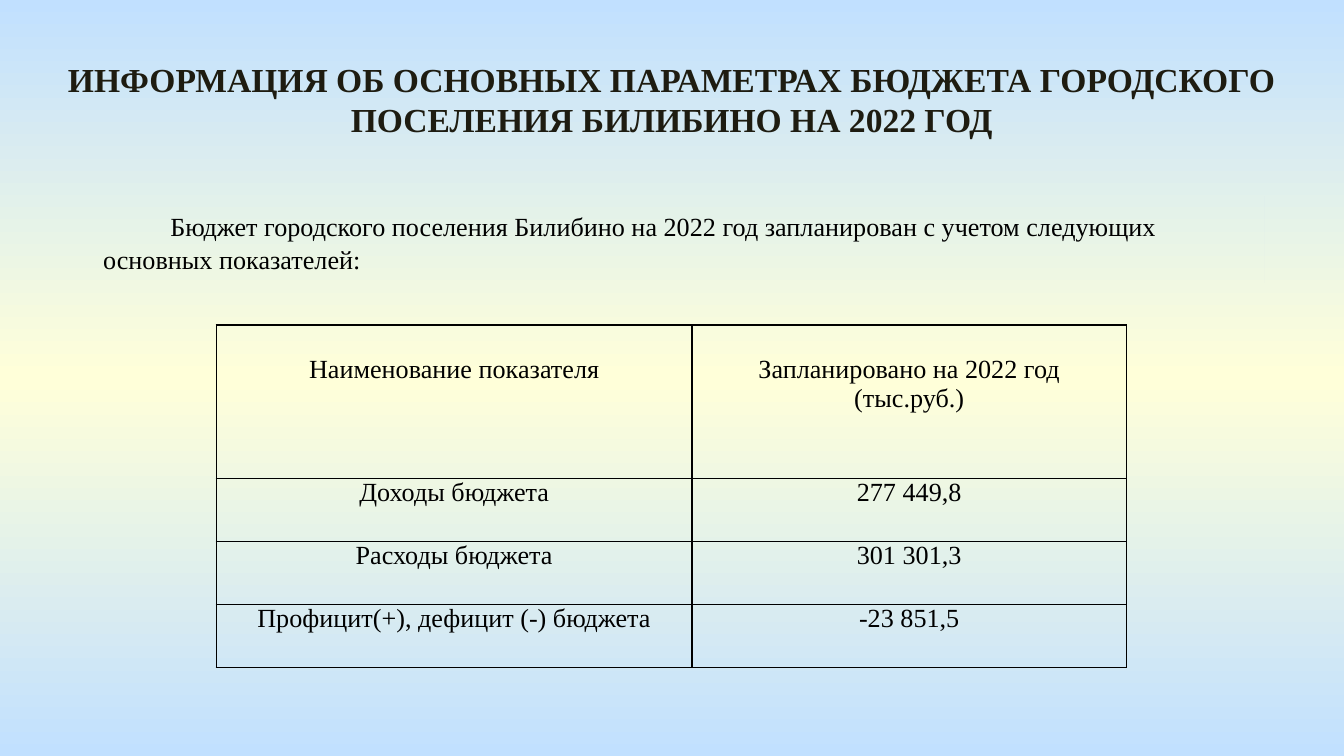
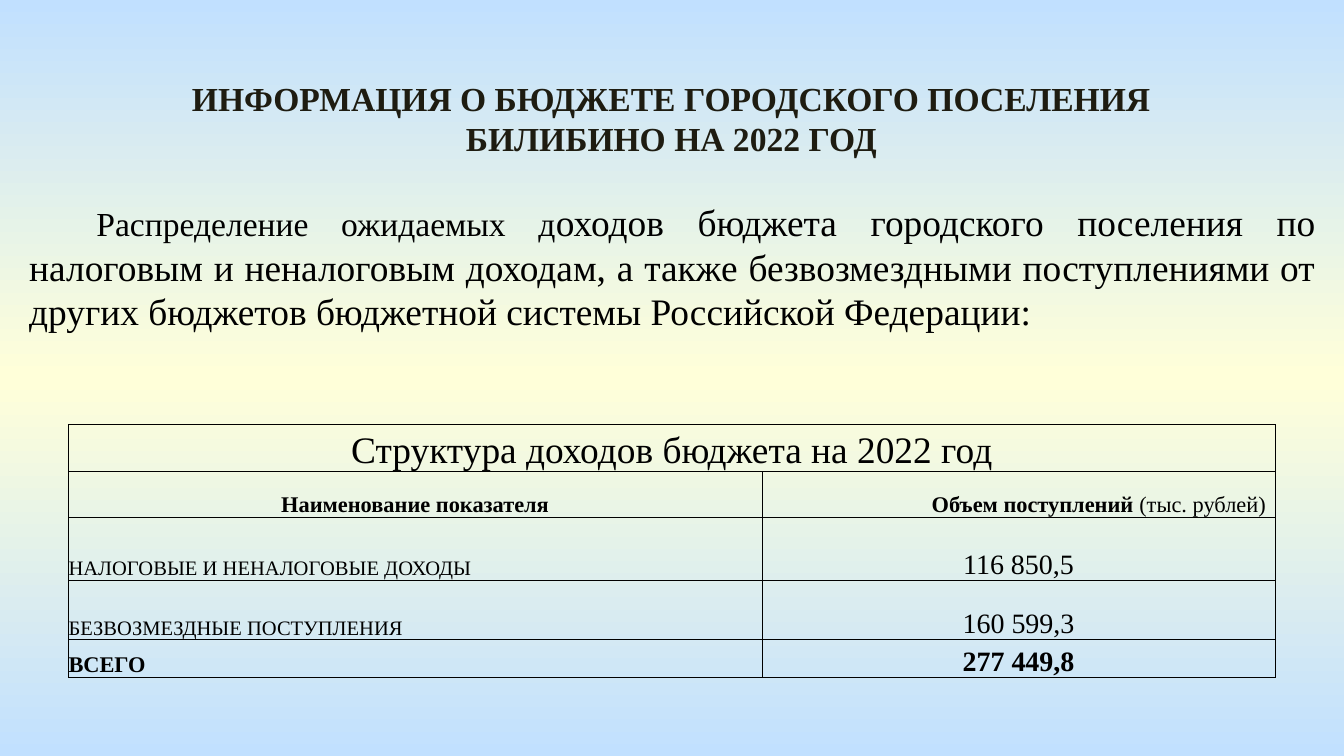
from pptx import Presentation
from pptx.dml.color import RGBColor
from pptx.enum.shapes import MSO_SHAPE
from pptx.enum.text import MSO_ANCHOR, PP_ALIGN
from pptx.util import Pt
from lxml.etree import fromstring
from copy import deepcopy

SKY, CREAM, INK, BLACK = "C1E0FF", "FFFFD9", "1E1C11", "000000"
SERIF = "Times New Roman"
LEFT, CENTER, RIGHT, JUSTIFY = PP_ALIGN.LEFT, PP_ALIGN.CENTER, PP_ALIGN.RIGHT, PP_ALIGN.JUSTIFY
NS = "http://schemas.openxmlformats.org/drawingml/2006/main"


def rgb(value):
    return RGBColor.from_string(value)


def write(tf, runs, size, align=LEFT, bold=False, color=BLACK):
    """Fill one paragraph; each run is a text and the font settings it changes."""
    p = tf.paragraphs[0]
    p.alignment = align
    p.font.name, p.font.size, p.font.bold = SERIF, Pt(size), bold
    p.font.color.rgb = rgb(color)
    for text, changes in runs:
        r = p.add_run()
        r.text = text
        for name, value in changes.items():
            setattr(r.font, name, value)


# Content: cells are (text, size, alignment, bold)
INDENT = ("\t", {"name": "Calibri", "size": Pt(18)})
head_1 = [("Наименование показателя", 14, CENTER, False),
          ("Запланировано на 2022 год (тыс.руб.)", 14, CENTER, False)]
body_1 = [[(name, 14, CENTER, False), (amount, 14, CENTER, False)] for name, amount in [
    ("Доходы бюджета", "277 449,8"),
    ("Расходы бюджета", "301 301,3"),
    ("Профицит(+), дефицит (-) бюджета", "-23 851,5")]]
head_2 = [[("Структура доходов бюджета на 2022 год", 20, CENTER, False), ("", 12, CENTER, False)],
          [("Наименование показателя", 12, CENTER, True),
           ("Объем поступлений ", 12, RIGHT, True)]]
body_2 = [[(name, size, LEFT, bold), (amount, 15, CENTER, bold)] for name, amount, size, bold in [
    ("НАЛОГОВЫЕ И НЕНАЛОГОВЫЕ ДОХОДЫ", "116 850,5", 11, False),
    ("БЕЗВОЗМЕЗДНЫЕ ПОСТУПЛЕНИЯ", "160 599,3", 11, False),
    ("ВСЕГО", "277 449,8", 12, True)]]

pages = [
    dict(title="ИНФОРМАЦИЯ ОБ ОСНОВНЫХ ПАРАМЕТРАХ БЮДЖЕТА ГОРОДСКОГО ПОСЕЛЕНИЯ БИЛИБИНО НА 2022 ГОД",
         title_box=(25.2, 28.1, 669.6, 51.1),
         intro=[INDENT, ("Бюджет городского поселения Билибино на 2022 год запланирован "
                         "с учетом следующих основных показателей:", {})],
         intro_box=(48.2, 105.1, 629.3, 46.1), intro_size=14, intro_align=LEFT,
         cells=[head_1] + body_1, at=(115.9, 174.2), cols=(254.9, 232.6),
         rows=(82.1, 33.8, 33.8, 33.8), line=1, side=5, anchor=MSO_ANCHOR.TOP),
    dict(title="ИНФОРМАЦИЯ О БЮДЖЕТЕ ГОРОДСКОГО ПОСЕЛЕНИЯ БИЛИБИНО НА 2022 ГОД",
         title_box=(81.4, 38.2, 556.6, 51.1),
         intro=[INDENT, ("Распределение ожидаемых д", {"size": Pt(18)}),
                ("оходов бюджета городского поселения по налоговым и неналоговым доходам, "
                 "а также безвозмездными поступлениями от других бюджетов бюджетной системы "
                 "Российской Федерации:", {})],
         intro_box=(8.6, 103, 703.4, 79.9), intro_size=20, intro_align=JUSTIFY,
         cells=head_2 + body_2, at=(36.7, 227.5), cols=(371.5, 275),
         rows=(25.2, 24.5, 33.8, 31.7, 20.2), line=0.5, side=0, anchor=MSO_ANCHOR.BOTTOM),
]

prs = Presentation()
prs.slide_width, prs.slide_height = Pt(720), Pt(405)

for page in pages:
    s = prs.slides.add_slide(prs.slide_layouts[6])

    # Background: blue, cream, blue from top to bottom
    fill = s.background.fill
    fill.gradient()
    fill.gradient_angle = 90
    first = fill.gradient_stops[0]._gs
    first.addnext(deepcopy(first))
    for stop, position, color in zip(fill.gradient_stops, (0, 0.5, 1), (SKY, CREAM, SKY)):
        stop.position = position
        stop.color.rgb = rgb(color)

    # Introduction, filled with the slide background
    sp = s.shapes.add_shape(MSO_SHAPE.RECTANGLE, *map(Pt, page["intro_box"]))
    sp.shadow.inherit = False
    sp.line.fill.background()
    sp._element.remove(sp._element.find("{*}style"))
    sp._element.set("useBgFill", "1")
    tf = sp.text_frame
    tf.word_wrap = True
    tf.vertical_anchor = MSO_ANCHOR.TOP
    write(tf, page["intro"], page["intro_size"], page["intro_align"])

    # Title
    tf = s.shapes.add_textbox(*map(Pt, page["title_box"])).text_frame
    tf.word_wrap = True
    write(tf, [(page["title"], {})], 18, CENTER, True, INK)

    # Table
    cols, rows = page["cols"], page["rows"]
    table = s.shapes.add_table(len(rows), len(cols), *map(Pt, page["at"]),
                               Pt(sum(cols)), Pt(sum(rows))).table
    table.first_row = table.horz_banding = False
    for column, width in zip(table.columns, cols):
        column.width = Pt(width)
    for row, height, texts in zip(table.rows, rows, page["cells"]):
        row.height = Pt(height)
        for cell, (text, size, align, bold) in zip(row.cells, texts):
            runs = [(text, {})] if text else []
            if align == RIGHT:
                runs.append(("(тыс. рублей)", {"bold": False}))
            write(cell.text_frame, runs, size, align, bold)
            cell.vertical_anchor = page["anchor"]
            cell.margin_left = cell.margin_right = Pt(5 if align == RIGHT else page["side"])
            cell.margin_top = Pt(16 if texts is head_1 else 0)
            cell.margin_bottom = 0
            cell.fill.background()
            for i, side in enumerate("LRTB"):
                cell._tc.tcPr.insert(i, fromstring(
                    f'<a:ln{side} xmlns:a="{NS}" w="{Pt(page["line"])}"><a:solidFill>'
                    f'<a:srgbClr val="{BLACK}"/></a:solidFill></a:ln{side}>'))
    if page["cells"][0] is head_2[0]:
        table.cell(0, 0).merge(table.cell(0, 1))

prs.save("out.pptx")
